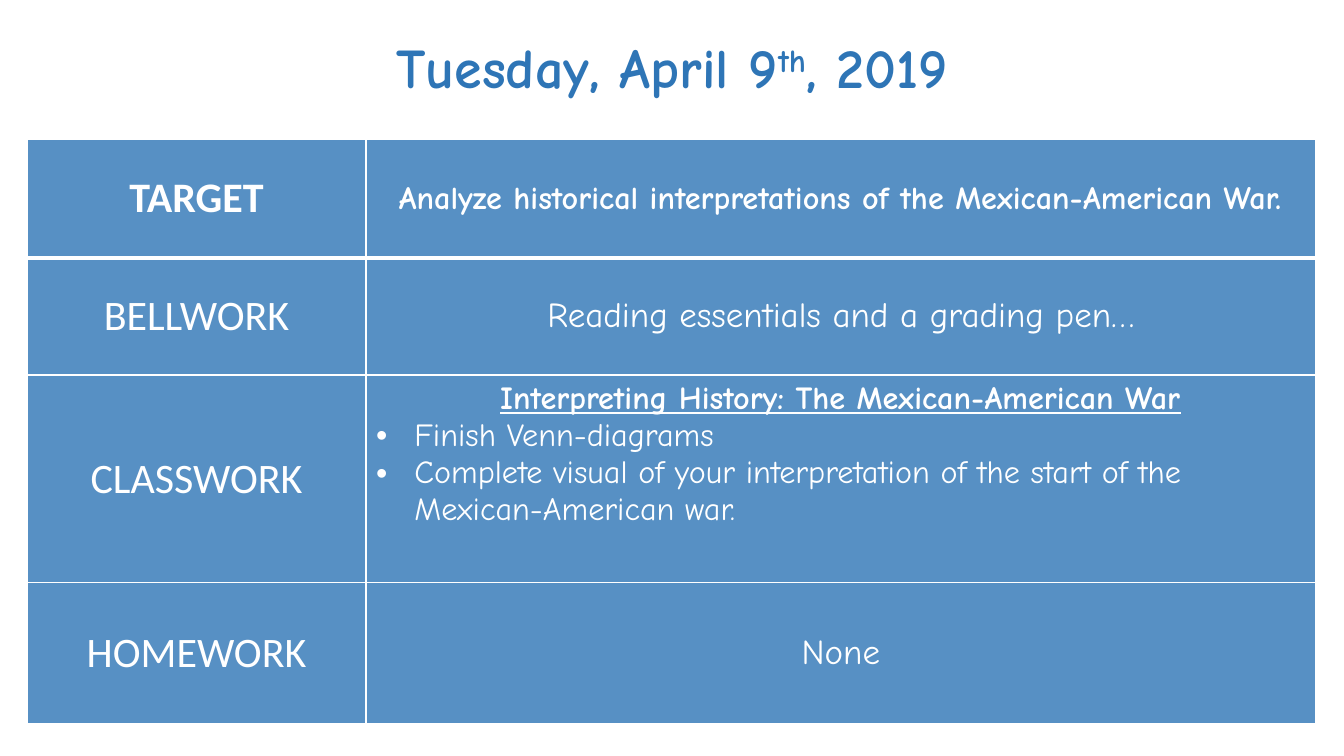
from lxml.etree import SubElement
from pptx import Presentation
from pptx.dml.color import RGBColor
from pptx.enum.shapes import MSO_SHAPE
from pptx.enum.text import MSO_ANCHOR, PP_ALIGN
from pptx.oxml.ns import qn
from pptx.util import Inches, Pt

COLORS = {"blue": "2E75B6", "white": "FFFFFF"}
LABEL = {"name": "Calibri", "size": Pt(30), "bold": False}
ENTRY = {"name": "Comic Neue", "size": Pt(25), "bold": False}
DETAIL = {**ENTRY, "size": Pt(23)}
HEADING = {**DETAIL, "bold": True, "underline": True}
TITLE = {**ENTRY, "size": Pt(40), "bold": True}

TITLE_PARTS = [("Tuesday, April 9", 0), ("th", 30), (", 2019", 0)]
CLASSWORK = [
    ("Interpreting History: The Mexican-American War", HEADING, False),
    ("Finish Venn-diagrams", DETAIL, True),
    ("Complete visual of your interpretation of the start of the "
     "Mexican-American war.", DETAIL, True),
]
AGENDA = [
    ("TARGET", 1.18, [("Analyze historical interpretations of the "
                       "Mexican-American War.", {**DETAIL, "bold": True}, False)]),
    ("BELLWORK", 1.16, [("Reading essentials and a grading pen…", ENTRY, False)]),
    ("CLASSWORK", 2.06, CLASSWORK),
    ("HOMEWORK", 1.4, [("None", ENTRY, False)]),
]
LEFT, WIDTH = 0.27, 12.79
COLUMNS = [3.36, 9.42]


class AgendaSlide:
    def __init__(self, deck):
        self.page = deck.slides.add_slide(deck.slide_layouts[6])

    def paint(self, fill, color, opacity):
        fill.solid()
        fill.fore_color.rgb = RGBColor.from_string(COLORS[color])
        for element in fill._xPr.iter(qn("a:srgbClr")):
            SubElement(element, qn("a:alpha"), val=str(opacity * 1000))

    def span(self, para, text, style, color):
        span = para.add_run()
        span.text = text
        for key, value in style.items():
            setattr(span.font, key, value)
        span.font.color.rgb = RGBColor.from_string(COLORS[color])
        return span

    def bullet(self, para):
        properties = para._p.get_or_add_pPr()
        properties.set("marL", str(Inches(0.38)))
        properties.set("indent", str(-Inches(0.38)))
        SubElement(properties, qn("a:buFont"), typeface="Arial")
        SubElement(properties, qn("a:buChar"), char="•")

    def borders(self, cell, widths):
        properties = cell._tc.get_or_add_tcPr()
        for side, width in widths.items():
            line = SubElement(properties, qn(f"a:ln{side}"), w=str(Pt(width)))
            fill = SubElement(line, qn("a:solidFill"))
            SubElement(fill, qn("a:srgbClr"), val=COLORS["white"])

    def cell(self, cell, content, anchor, widths):
        self.borders(cell, widths)
        self.paint(cell.fill, "blue", 80)
        cell.vertical_anchor = anchor
        frame = cell.text_frame
        for index, (text, style, bulleted) in enumerate(content):
            para = frame.add_paragraph() if index else frame.paragraphs[0]
            para.alignment = PP_ALIGN.LEFT if bulleted else PP_ALIGN.CENTER
            if bulleted:
                self.bullet(para)
            self.span(para, text, style, "white")

    def table(self, agenda, top):
        height = sum(row[1] for row in agenda)
        table = self.page.shapes.add_table(
            len(agenda), len(COLUMNS), Inches(LEFT), Inches(top),
            Inches(WIDTH), Inches(height)).table
        for column, width in zip(table.columns, COLUMNS):
            column.width = Inches(width)
        for index, (label, height, content) in enumerate(agenda):
            table.rows[index].height = Inches(height)
            widths = {"L": 1, "R": 1, "T": 3 if index == 1 else 1,
                      "B": 3 if index == 0 else 1}
            label_style = {**LABEL, "bold": index == 0}
            anchor = MSO_ANCHOR.TOP if len(content) > 1 else MSO_ANCHOR.MIDDLE
            self.cell(table.cell(index, 0), [(label, label_style, False)],
                      MSO_ANCHOR.MIDDLE, widths)
            self.cell(table.cell(index, 1), content, anchor, widths)

    def title(self, parts, top, height):
        box = self.page.shapes.add_shape(
            MSO_SHAPE.RECTANGLE, Inches(LEFT), Inches(top),
            Inches(WIDTH), Inches(height))
        box.shadow.inherit = False
        box.line.fill.background()
        self.paint(box.fill, "white", 65)
        frame = box.text_frame
        frame.word_wrap = True
        frame.vertical_anchor = MSO_ANCHOR.MIDDLE
        para = frame.paragraphs[0]
        para.alignment = PP_ALIGN.CENTER
        for text, raised in parts:
            span = self.span(para, text, TITLE, "blue")
            if raised:
                span.font._element.set("baseline", str(raised * 1000))


def main():
    deck = Presentation()
    deck.slide_width, deck.slide_height = Inches(13.33), Inches(7.5)
    slide = AgendaSlide(deck)
    slide.table(AGENDA, 1.38)
    slide.title(TITLE_PARTS, 0.16, 1)
    deck.save("out.pptx")


if __name__ == "__main__":
    main()
